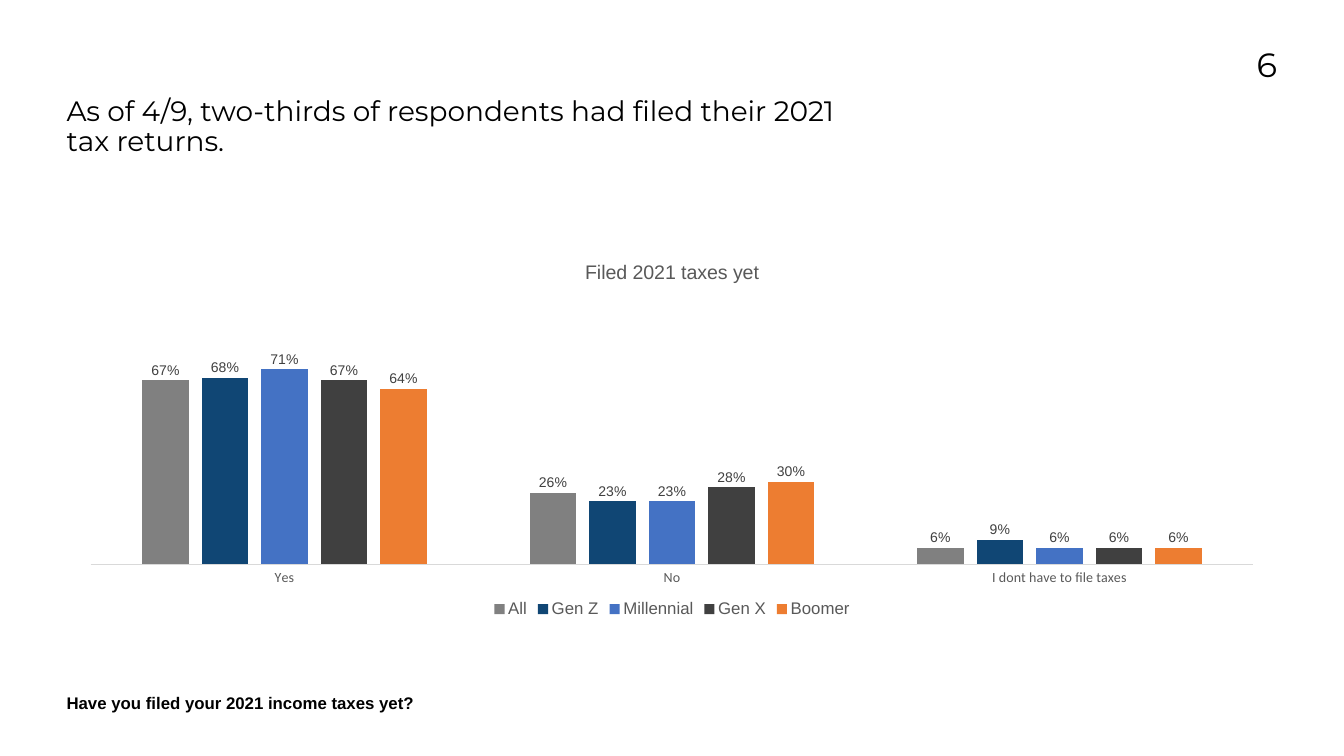
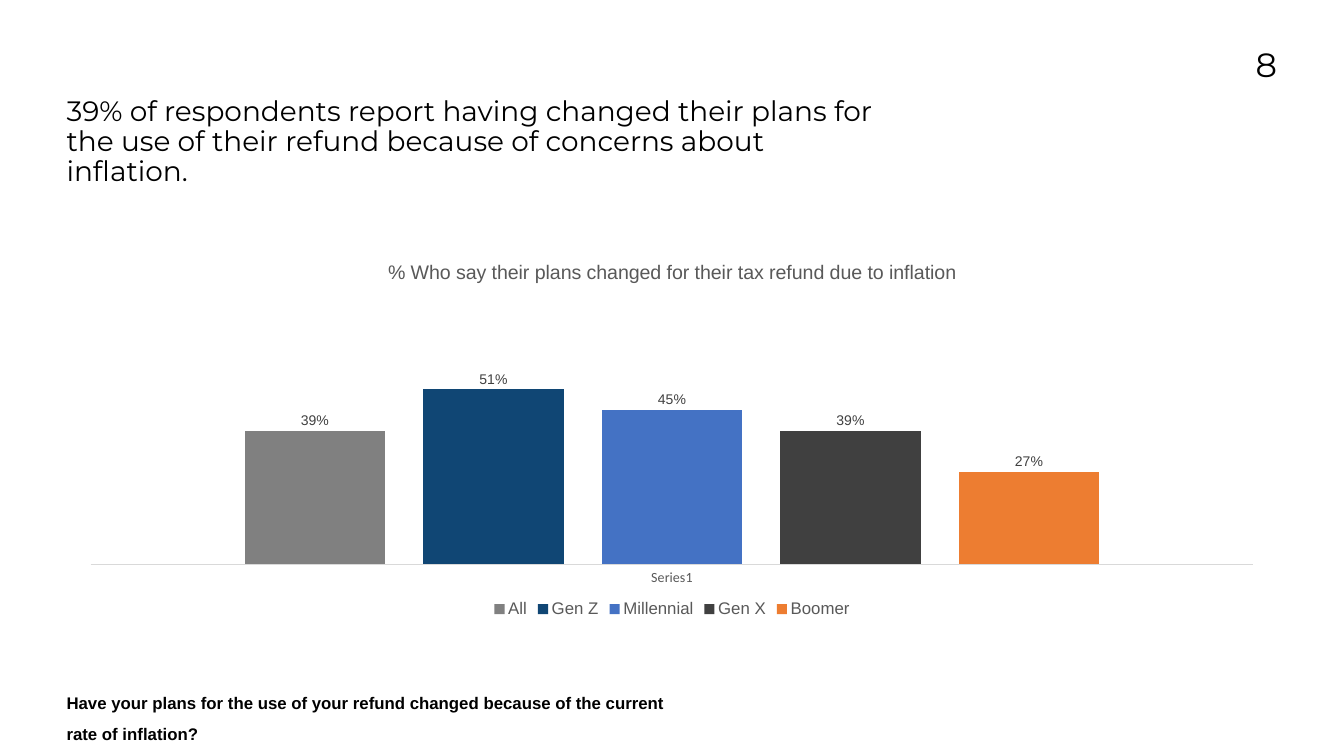
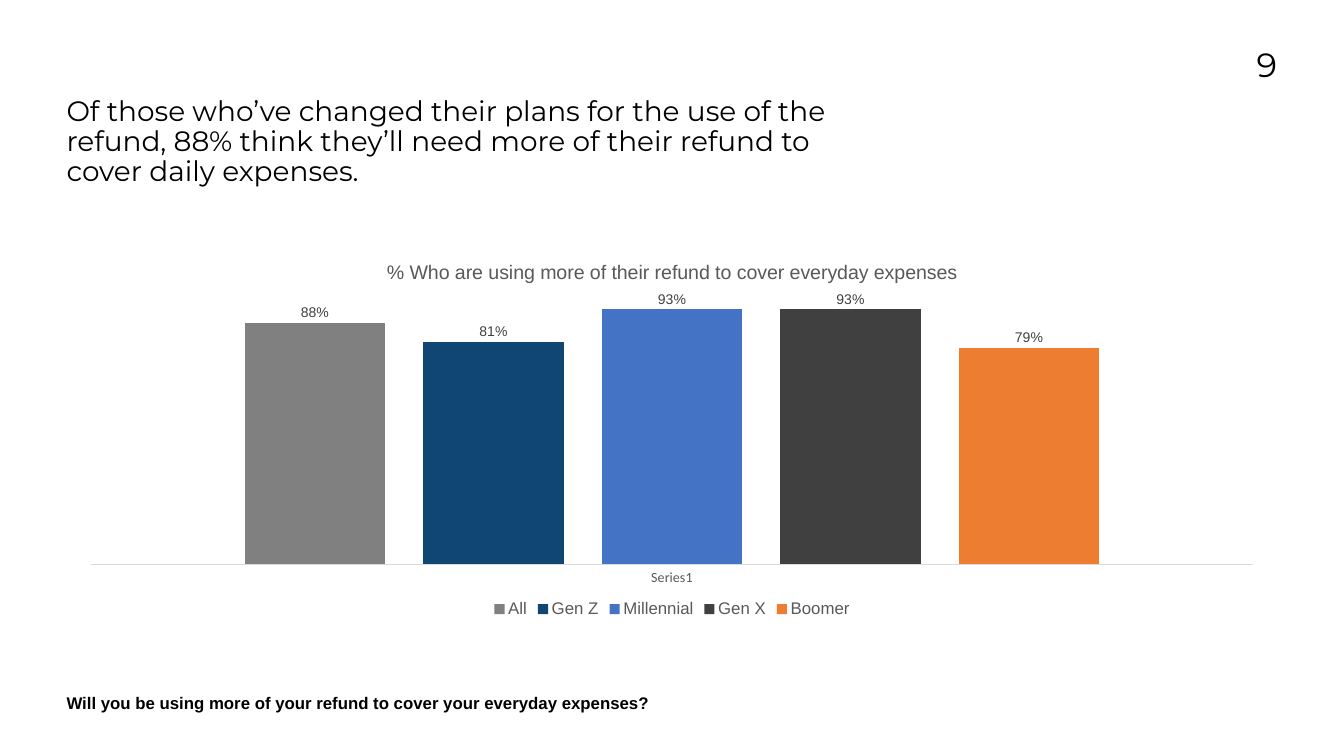
from lxml.etree import SubElement
from pptx import Presentation
from pptx.chart.data import CategoryChartData as Data
from pptx.dml.color import RGBColor as RGB
from pptx.enum.chart import XL_CHART_TYPE as Kind
from pptx.enum.chart import XL_LABEL_POSITION as Spot
from pptx.enum.chart import XL_LEGEND_POSITION as Side
from pptx.enum.chart import XL_TICK_LABEL_POSITION as Label
from pptx.enum.chart import XL_TICK_MARK as Tick
from pptx.enum.text import PP_ALIGN as Align
from pptx.oxml.ns import qn
from pptx.util import Inches, Pt

COLORS = {
    "text": "000000", "soft": "595959", "label": "404040", "line": "D9D9D9",
    "All": "808080", "Gen Z": "104674", "Millennial": "4472C4",
    "Gen X": "404040", "Boomer": "ED7D31",
}
GROUPS = ["All", "Gen Z", "Millennial", "Gen X", "Boomer"]

# Font formats, shared by text boxes and charts
FONTS = {
    "number": {"name": "Montserrat", "size": Pt(48), "bold": False},
    "title": {"name": "Montserrat", "size": Pt(40), "bold": False},
    "question": {"name": "Arial", "size": Pt(24), "bold": True},
    "chart": {"name": "Calibri", "size": Pt(10)},
    "heading": {"name": "Arial", "size": Pt(28), "bold": False},
    "axis": {"name": "Calibri", "size": Pt(20)},
    "legend": {"name": "Arial", "size": Pt(24)},
    "label": {"name": "Arial", "size": Pt(20)},
}
LEFT = 1.32
# Plot area as shares of the chart frame
PLOT = {"x": 0.02, "y": 0.117, "w": 0.96, "h": 0.73}


class Deck:
    def __init__(self):
        self.prs = Presentation()
        self.prs.slide_width = Inches(26.67)
        self.prs.slide_height = Inches(15)
        self.slide = None

    def start(self):
        self.slide = self.prs.slides.add_slide(self.prs.slide_layouts[6])

    def style(self, font, form, color="text"):
        for key, value in FONTS[form].items():
            setattr(font, key, value)
        font.color.rgb = RGB.from_string(COLORS[color])

    def text(self, words, form, box, **layout):
        frame = self.slide.shapes.add_textbox(*map(Inches, box)).text_frame
        frame.word_wrap = True
        for side in ("left", "top", "right", "bottom"):
            setattr(frame, f"margin_{side}", 0)
        para = frame.paragraphs[0]
        for key, value in layout.items():
            setattr(para, key, value)
        run = para.add_run()
        run.text = words
        self.style(run.font, form)

    def number(self, words):
        self.text(words, "number", (23.09, 0.88, 2.25, 1.64),
                  alignment=Align.RIGHT)

    def title(self, words):
        self.text(words, "title", (LEFT, 1.93, 16.01, 2.08), line_spacing=0.9)

    def question(self, words, width):
        self.text(words, "question", (LEFT, 13.55, width, 0.65),
                  line_spacing=1.5)

    def chart(self, heading, cats, rows, top):
        data = Data(number_format="0%")
        data.categories = cats
        for name, values in zip(GROUPS, rows):
            data.add_series(name, values)
        box = map(Inches, (LEFT, 4.88, 24.03, 7.46))
        chart = self.slide.shapes.add_chart(
            Kind.COLUMN_CLUSTERED, *box, data).chart
        self.style(chart.font, "chart")

        # Heading and legend
        chart.has_title = True
        para = chart.chart_title.text_frame.paragraphs[0]
        run = para.add_run()
        run.text = heading
        self.style(run.font, "heading", "soft")
        chart.chart_title.include_in_layout = False
        chart.has_legend = True
        chart.legend.position = Side.BOTTOM
        chart.legend.include_in_layout = False
        self.style(chart.legend.font, "legend", "soft")

        # Axes
        axis = chart.category_axis
        axis.major_tick_mark = axis.minor_tick_mark = Tick.NONE
        axis.tick_label_position = Label.LOW
        self.style(axis.tick_labels.font, "axis", "soft")
        axis.format.line.color.rgb = RGB.from_string(COLORS["line"])
        axis.format.line.width = Pt(0.75)
        scale = chart.value_axis
        scale.minimum_scale, scale.maximum_scale = 0, top
        scale.has_major_gridlines = False
        scale.visible = False

        # Columns
        plot = chart.plots[0]
        plot.vary_by_categories = False
        plot.gap_width, plot.overlap = 219, -27
        for item in plot.series:
            item.format.fill.solid()
            item.format.fill.fore_color.rgb = RGB.from_string(
                COLORS[item.name])
            labels = item.data_labels
            labels.show_value = True
            labels.position = Spot.OUTSIDE_END
            labels.number_format = "0%"
            labels.number_format_is_linked = False
            self.style(labels.font, "label", "label")
        self.place(chart)

    def place(self, chart):
        area = chart.element.find(".//" + qn("c:plotArea"))
        layout = area.find(qn("c:layout"))
        if layout is None:
            layout = SubElement(area, qn("c:layout"))
            area.insert(0, layout)
        manual = SubElement(layout, qn("c:manualLayout"))
        rules = {"layoutTarget": "inner", "xMode": "edge", "yMode": "edge"}
        for tag, value in {**rules, **PLOT}.items():
            SubElement(manual, qn(f"c:{tag}")).set("val", str(value))


PAGES = [
    {
        "number": "6",
        "title": "As of 4/9, two-thirds of respondents had filed their 2021 "
                 "tax returns.",
        "heading": "Filed 2021 taxes yet",
        "cats": ["Yes", "No", "I dont have to file taxes"],
        "rows": [(0.67, 0.26, 0.06), (0.68, 0.23, 0.09), (0.71, 0.23, 0.06),
                 (0.67, 0.28, 0.06), (0.64, 0.3, 0.06)],
        "top": 1,
        "question": "Have you filed your 2021 income taxes yet?",
        "width": 14.52,
    },
    {
        "number": "8",
        "title": "39% of respondents report having changed their plans for "
                 "the use of their refund because of concerns about "
                 "inflation.",
        "heading": "% Who say their plans changed for their tax refund due "
                   "to inflation",
        "cats": ["Series1"],
        "rows": [(0.39,), (0.51,), (0.45,), (0.39,), (0.27,)],
        "top": 0.8,
        "question": "Have your plans for the use of your refund changed "
                    "because of the current rate of inflation?",
        "width": 12.01,
    },
    {
        "number": "9",
        "title": "Of those who’ve changed their plans for the use of the "
                 "refund, 88% think they’ll need more of their refund to "
                 "cover daily expenses.",
        "heading": "% Who are using more of their refund to cover everyday "
                   "expenses",
        "cats": ["Series1"],
        "rows": [(0.88,), (0.81,), (0.93,), (0.93,), (0.79,)],
        "top": 1,
        "question": "Will you be using more of your refund to cover your "
                    "everyday expenses?",
        "width": 12.01,
    },
]


def main():
    deck = Deck()
    for page in PAGES:
        deck.start()
        deck.number(page["number"])
        deck.chart(page["heading"], page["cats"], page["rows"], page["top"])
        deck.title(page["title"])
        deck.question(page["question"], page["width"])
    deck.prs.save("out.pptx")


if __name__ == "__main__":
    main()
